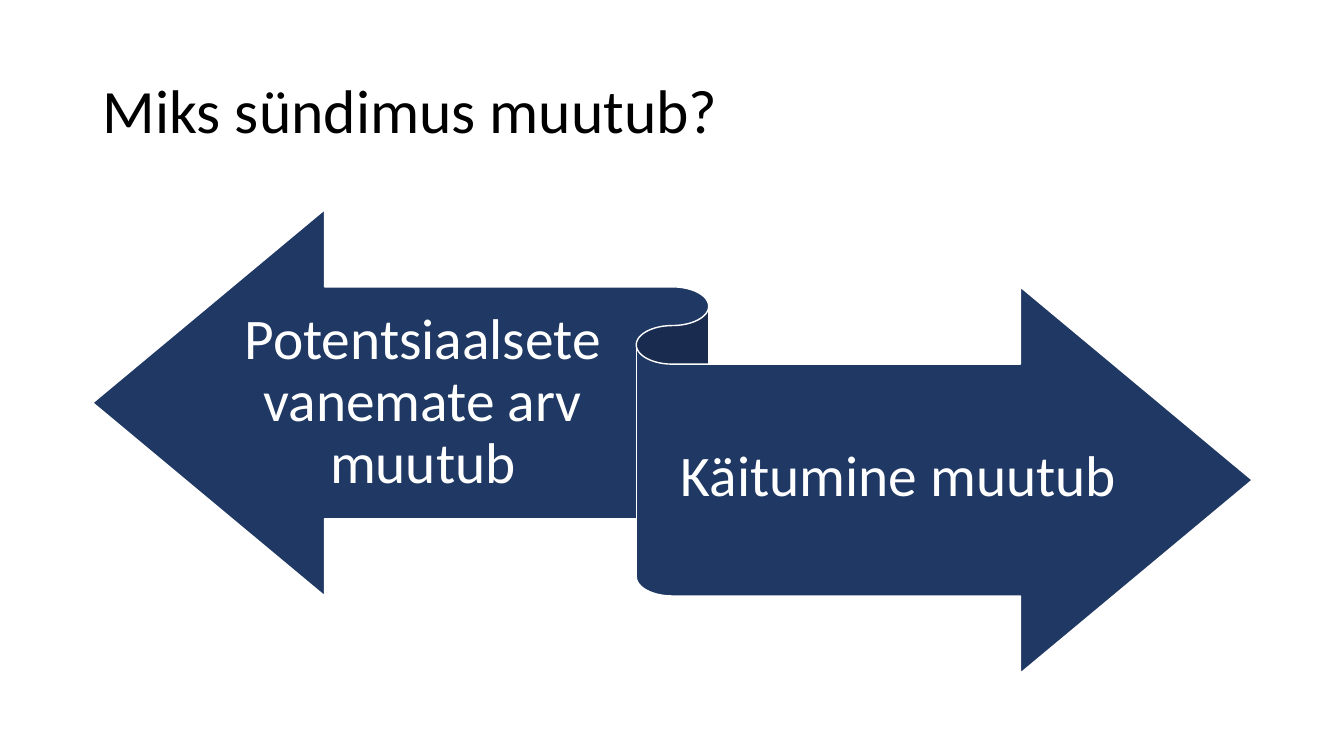
from pptx import Presentation
from pptx.dml.color import RGBColor
from pptx.enum.shapes import MSO_SHAPE
from pptx.enum.text import MSO_ANCHOR, PP_ALIGN
from pptx.util import Inches, Pt

NAVY, WHITE, BLACK = "203864", "FFFFFF", "000000"


def paint(color_format, value):
    color_format.rgb = RGBColor.from_string(value)


def add_text(text, left, top, width, height, size=41, color=WHITE,
             align=PP_ALIGN.CENTER, side=0, above=0.16, below=0.17):
    frame = slide.shapes.add_textbox(
        Inches(left), Inches(top), Inches(width), Inches(height)).text_frame
    frame.word_wrap = True
    frame.vertical_anchor = MSO_ANCHOR.MIDDLE
    frame.margin_left = frame.margin_right = Inches(side)
    frame.margin_top, frame.margin_bottom = Inches(above), Inches(below)
    paragraph = frame.paragraphs[0]
    paragraph.alignment = align
    paragraph.line_spacing = 0.9
    run = paragraph.add_run()
    run.text = text
    run.font.name = "Calibri"
    run.font.size = Pt(size)
    paint(run.font.color, color)


prs = Presentation()
prs.slide_width, prs.slide_height = Inches(13.33), Inches(7.5)
slide = prs.slides.add_slide(prs.slide_layouts[6])

add_text("Miks sündimus muutub?", 0.92, 0.4, 11.5, 1.45, size=44, color=BLACK,
         align=PP_ALIGN.LEFT, side=0.1, above=0.05, below=0.05)

ribbon = slide.shapes.add_shape(
    MSO_SHAPE.LEFT_RIGHT_RIBBON, Inches(0.92), Inches(2.08), Inches(11.5), Inches(4.6))
ribbon.shadow.inherit = False
ribbon.fill.solid()
paint(ribbon.fill.fore_color, NAVY)
paint(ribbon.line.color, WHITE)
ribbon.line.width = Pt(1)

add_text("Potentsiaalsete vanemate arv muutub", 2.3, 2.88, 3.79, 2.25)
add_text("Käitumine muutub", 6.67, 3.62, 4.49, 2.25)

prs.save("out.pptx")
